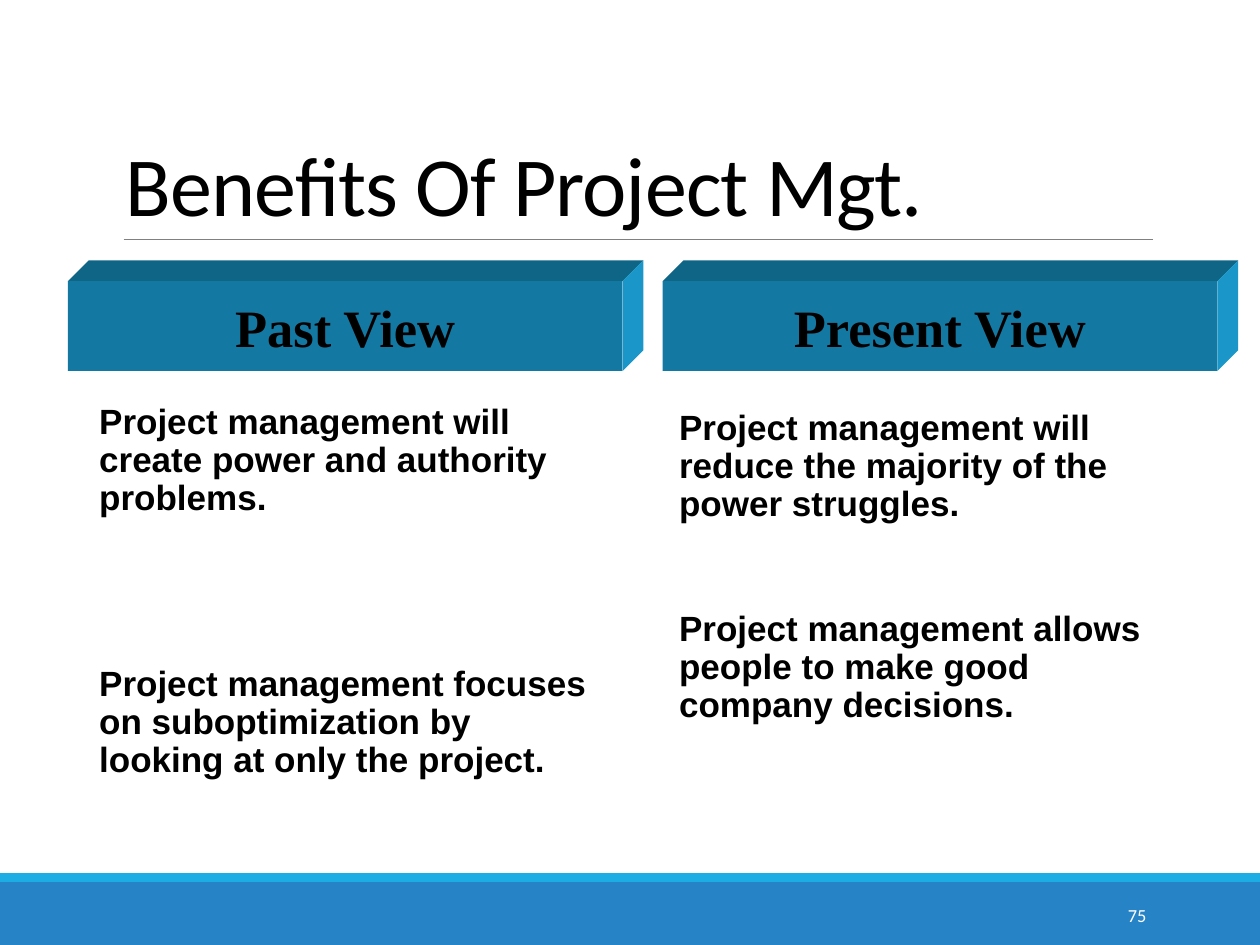
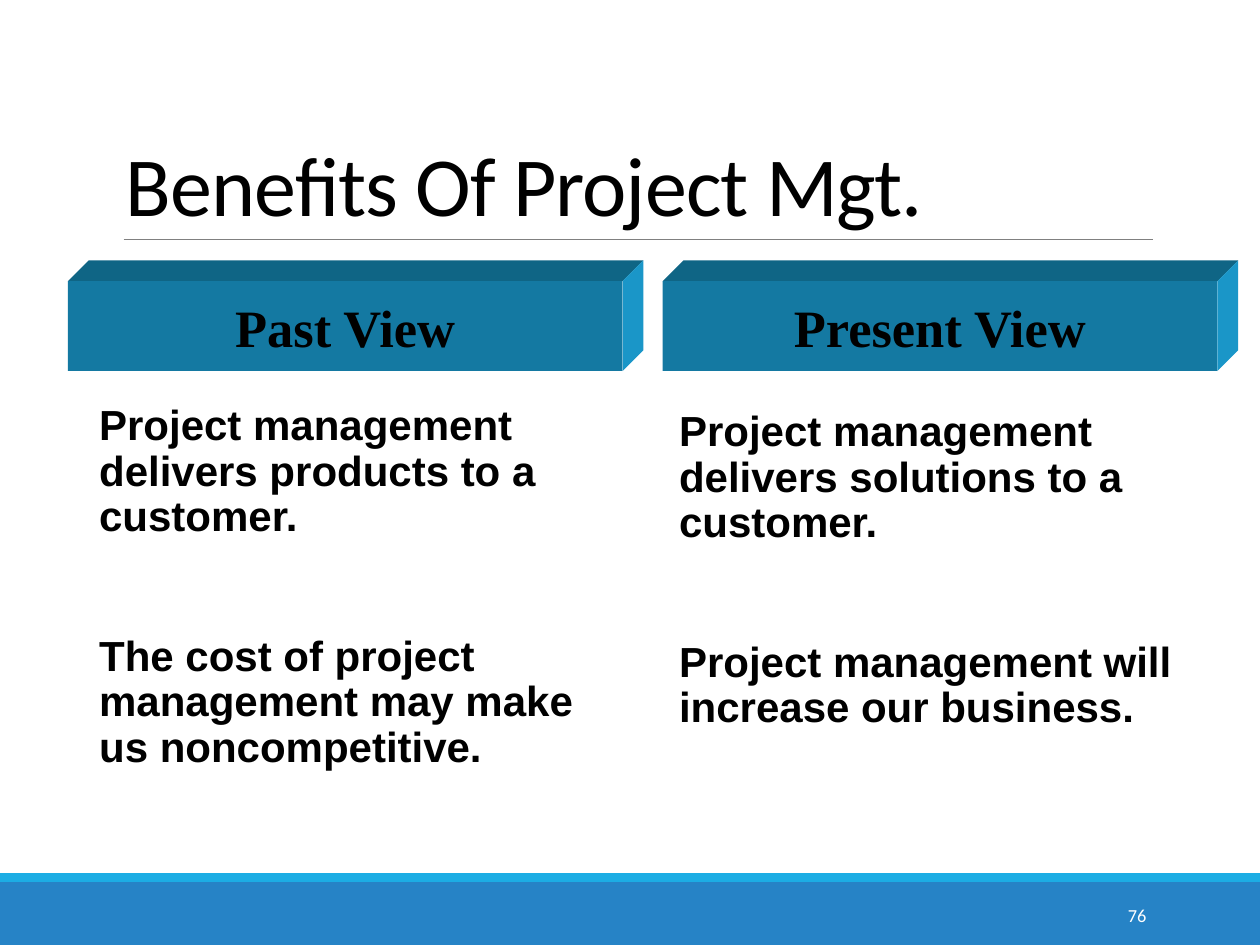
import pptx
import pptx.util
import pptx.dml.color
import pptx.enum.shapes
import pptx.enum.text
import pptx.oxml.ns
import lxml.etree

Cm = pptx.util.Cm
Pt = pptx.util.Pt
ALIGN = pptx.enum.text.PP_ALIGN
ANCHOR = pptx.enum.text.MSO_ANCHOR

BLACK, WHITE, GREY = "000000", "FFFFFF", "808080"
BLUE, CYAN = "2683C6", "1CADE4"
FRONT, TOP, SIDE = "1479A2", "0F6585", "1A96C8"

TITLE = "Benefits Of Project Mgt."
VIEWS = ["Past View", "Present View"]
BAR_X = [1.37, 13.36]
BODY_BOX = [(1.75, 8.03, 10.21, 8.81), (13.44, 8.15, 10.46, 8.69)]

# Each slide: page number, text size, then per column the gap in lines and the points
PAGES = [
    (75, 20, [
        (2, ["Project management will create power and authority problems.",
             "Project management focuses on suboptimization by looking at only the project."]),
        (1, ["Project management will reduce the majority of the power struggles.",
             "Project management allows people to make good company decisions."]),
    ]),
    (76, 24, [
        (1, ["Project management delivers products to a customer.",
             "The cost of project management may make us noncompetitive."]),
        (1, ["Project management delivers solutions to a customer.",
             "Project management will increase our business."]),
    ]),
]


def color(code):
    return pptx.dml.color.RGBColor.from_string(code)


class Deck:
    """Holds the shared style and the slide being built."""

    def __init__(self):
        self.prs = pptx.Presentation()
        self.prs.slide_width, self.prs.slide_height = Cm(25.4), Cm(19.05)
        self.slide = None

    def start(self, number):
        """Add a slide with its bands, title, rule and page number."""
        self.slide = self.prs.slides.add_slide(self.prs.slide_layouts[6])
        self.block(0, 17.78, 25.4, 1.27, BLUE)
        self.block(0, 17.6, 25.4, 0.18, CYAN)
        self.rule(2.49, 23.24, 4.83)
        title = self.text((2.29, 0.79, 20.96, 4.04), [TITLE], 48, "Calibri",
                          anchor=ANCHOR.BOTTOM)
        line = title.paragraphs[0]
        line.line_spacing = 0.85
        line.runs[0]._r.get_or_add_rPr().set("spc", "-50")
        self.text((20.62, 17.93, 2.74, 1.02), [str(number)], 10.5, "Calibri",
                  WHITE, align=ALIGN.RIGHT, anchor=ANCHOR.MIDDLE)

    def paint(self, shape, fill):
        shape.shadow.inherit = False
        shape.fill.solid()
        shape.fill.fore_color.rgb = color(fill)
        shape.line.fill.background()
        return shape

    def block(self, x, y, w, h, fill):
        kind = pptx.enum.shapes.MSO_SHAPE.RECTANGLE
        shape = self.slide.shapes.add_shape(kind, Cm(x), Cm(y), Cm(w), Cm(h))
        return self.paint(shape, fill)

    def outline(self, points, fill):
        first, *rest = [(Cm(x), Cm(y)) for x, y in points]
        form = self.slide.shapes.build_freeform(*first)
        form.add_line_segments(rest, close=True)
        return self.paint(form.convert_to_shape(), fill)

    def rule(self, left, right, y):
        kind = pptx.enum.shapes.MSO_CONNECTOR.STRAIGHT
        line = self.slide.shapes.add_connector(kind, Cm(left), Cm(y), Cm(right), Cm(y))
        line.line.color.rgb = color(GREY)
        line.line.width = Pt(0.5)
        lxml.etree.SubElement(line._element.spPr, pptx.oxml.ns.qn("a:effectLst"))

    def label(self, frame, lines, size, font, ink=BLACK, bold=False, align=ALIGN.LEFT,
              anchor=ANCHOR.TOP):
        """Fill a text frame, one paragraph a line, and format its runs."""
        frame.text = "\n".join(lines)
        frame.vertical_anchor = anchor
        for para in frame.paragraphs:
            para.alignment = align
            for run in para.runs:
                run.font.name, run.font.size, run.font.bold = font, Pt(size), bold
                run.font.color.rgb = color(ink)
        return frame

    def text(self, box, lines, size, font, *style, **more):
        frame = self.slide.shapes.add_textbox(*map(Cm, box)).text_frame
        frame.word_wrap = True
        return self.label(frame, lines, size, font, *style, **more)

    def header(self, x, view):
        """Draw a raised bar: front face, top face and right side."""
        y, w, h, deep = 5.67, 11.18, 1.81, 0.42
        self.outline([(x, y), (x + deep, y - deep), (x + w + deep, y - deep), (x + w, y)], TOP)
        self.outline([(x + w, y), (x + w + deep, y - deep),
                      (x + w + deep, y + h - deep), (x + w, y + h)], SIDE)
        front = self.block(x, y, w, h, FRONT)
        self.label(front.text_frame, [view], 30, "Times New Roman", bold=True,
                   align=ALIGN.CENTER, anchor=ANCHOR.MIDDLE)

    def column(self, box, points, size, gap):
        """Set the points in one box, parted by the height of gap text lines."""
        frame = self.text(box, points, size, "Arial", bold=True)
        frame.margin_left, frame.margin_right = Cm(0.25), 0
        for spot, para in enumerate(frame.paragraphs):
            para.line_spacing = 0.9
            para.space_after = Pt(2)
            if spot:
                para.space_before = Pt(round(12 + gap * (14 + 1.08 * size)))


def main():
    deck = Deck()
    for number, size, columns in PAGES:
        deck.start(number)
        for x, view, box, (gap, points) in zip(BAR_X, VIEWS, BODY_BOX, columns):
            deck.header(x, view)
            deck.column(box, points, size, gap)
    deck.prs.save("out.pptx")


if __name__ == "__main__":
    main()
